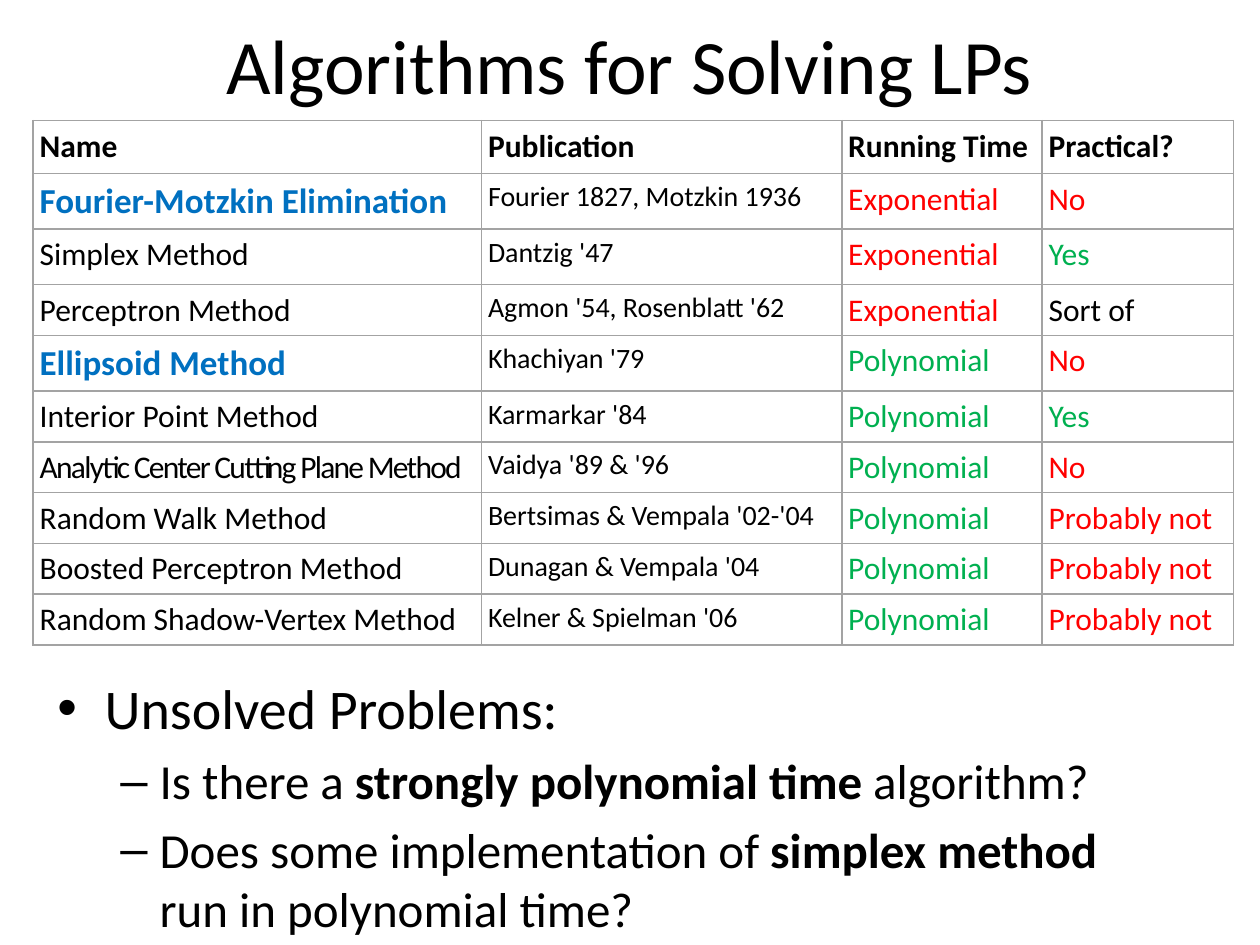
from typing import NamedTuple

from lxml import etree
from pptx import Presentation
from pptx import util as u
from pptx.dml.color import RGBColor
from pptx.enum import text
from pptx.oxml import ns

FONT = "Calibri"
BLACK, BLUE, RED, GREEN, GREY = "000000", "0070C0", "FF0000", "00B050", "A3A3A3"
HEADERS = ("Name", "Publication", "Running Time", "Practical?")
COLUMN_WIDTHS = (9.04, 7.26, 4.04, 3.86)
VERDICT_COLORS = {
    "Exponential": RED,
    "Polynomial": GREEN,
    "Yes": GREEN,
    "No": RED,
    "Probably not": RED,
    "Sort of": BLACK,
}


class Algorithm(NamedTuple):
    name: str
    publication: str
    running_time: str
    practical: str
    height: float = 1.02
    featured: bool = False
    spacing: int = 0


class Bullet(NamedTuple):
    symbol: str
    size: int
    margin: float
    hanging: float
    runs: tuple[tuple[str, bool], ...]


ALGORITHMS = (
    Algorithm("Fourier-Motzkin Elimination", "Fourier 1827, Motzkin 1936",
              "Exponential", "No", 1.12, featured=True),
    Algorithm("Simplex Method", "Dantzig '47", "Exponential", "Yes", 1.12),
    Algorithm("Perceptron Method", "Agmon '54, Rosenblatt '62", "Exponential", "Sort of"),
    Algorithm("Ellipsoid Method", "Khachiyan '79", "Polynomial", "No", 1.12, featured=True),
    Algorithm("Interior Point Method", "Karmarkar '84", "Polynomial", "Yes"),
    Algorithm("Analytic Center Cutting Plane Method", "Vaidya '89 & '96",
              "Polynomial", "No", spacing=-100),
    Algorithm("Random Walk Method", "Bertsimas & Vempala '02-'04", "Polynomial", "Probably not"),
    Algorithm("Boosted Perceptron Method", "Dunagan & Vempala '04", "Polynomial", "Probably not"),
    Algorithm("Random Shadow-Vertex Method", "Kelner & Spielman '06", "Polynomial", "Probably not"),
)

PROBLEMS = (
    Bullet("•", 32, 0.95, 0.95, (("Unsolved Problems:", False),)),
    Bullet("–", 28, 2.06, 0.79, (
        ("Is there a ", False), ("strongly polynomial time", True), (" algorithm?", False))),
    Bullet("–", 28, 2.06, 0.79, (
        ("Does some implementation of ", False), ("simplex method ", True),
        ("run in polynomial time?", False))),
)


def rgb(color: str) -> RGBColor:
    return RGBColor.from_string(color)


def add_run(p, content: str, size: float, color: str = BLACK, bold: bool = False,
            spacing: int = 0) -> None:
    r = p.add_run()
    r.text = content
    r.font.name = FONT
    r.font.size = u.Pt(size)
    r.font.bold = bold
    r.font.color.rgb = rgb(color)
    if spacing:
        r._r.get_or_add_rPr().set("spc", str(spacing))


def add_borders(cell) -> None:
    tc_pr = cell._tc.get_or_add_tcPr()
    for i, side in enumerate(("lnL", "lnR", "lnT", "lnB")):
        line = etree.Element(ns.qn(f"a:{side}"), w=str(u.Pt(1)))
        fill = etree.SubElement(line, ns.qn("a:solidFill"))
        etree.SubElement(fill, ns.qn("a:srgbClr"), val=GREY)
        tc_pr.insert(i, line)


def write_cell(cell, content: str, size: float, color: str = BLACK, bold: bool = False,
               spacing: int = 0) -> None:
    cell.margin_left = cell.margin_right = u.Cm(0.13)
    cell.margin_top = cell.margin_bottom = u.Cm(0.13)
    cell.fill.background()
    add_borders(cell)
    add_run(cell.text_frame.paragraphs[0], content, size, color, bold, spacing)


def write_algorithm(table, row: int, a: Algorithm) -> None:
    table.rows[row].height = u.Cm(a.height)
    name_size, name_color = (20, BLUE) if a.featured else (18, BLACK)
    write_cell(table.cell(row, 0), a.name, name_size, name_color, a.featured, a.spacing)
    write_cell(table.cell(row, 1), a.publication, 16)
    for col, verdict in enumerate((a.running_time, a.practical), 2):
        write_cell(table.cell(row, col), verdict, 18, VERDICT_COLORS[verdict])


def add_algorithm_table(s) -> None:
    frame = s.shapes.add_table(len(ALGORITHMS) + 1, len(HEADERS), u.Cm(0.67), u.Cm(2.43),
                               u.Cm(sum(COLUMN_WIDTHS)), u.Cm(10.62))
    table = frame.table
    table.first_row = table.horz_banding = False
    table.rows[0].height = u.Cm(1.07)
    for col, (header, width) in enumerate(zip(HEADERS, COLUMN_WIDTHS)):
        table.columns[col].width = u.Cm(width)
        write_cell(table.cell(0, col), header, 18, bold=True)
    for row, algorithm in enumerate(ALGORITHMS, 1):
        write_algorithm(table, row, algorithm)


def write_bullet(p, bullet: Bullet) -> None:
    p.space_before = u.Pt(bullet.size * 0.2)
    p_pr = p._p.get_or_add_pPr()
    p_pr.set("marL", str(u.Cm(bullet.margin)))
    p_pr.set("indent", str(-u.Cm(bullet.hanging)))
    etree.SubElement(p_pr, ns.qn("a:buFont"), typeface="Arial")
    etree.SubElement(p_pr, ns.qn("a:buChar"), char=bullet.symbol)
    for content, bold in bullet.runs:
        add_run(p, content, bullet.size, bold=bold)


def add_problems(s) -> None:
    sp = s.shapes.add_textbox(u.Cm(0.91), u.Cm(13.46), u.Cm(22.86), u.Cm(5.23))
    tf = sp.text_frame
    tf.word_wrap = True
    for i, bullet in enumerate(PROBLEMS):
        write_bullet(tf.add_paragraph() if i else tf.paragraphs[0], bullet)


def add_title(s) -> None:
    sp = s.shapes.title
    sp.left, sp.top, sp.width, sp.height = u.Cm(1.27), u.Cm(0), u.Cm(22.86), u.Cm(2.57)
    tf = sp.text_frame
    tf.vertical_anchor = text.MSO_ANCHOR.MIDDLE
    p = tf.paragraphs[0]
    p.alignment = text.PP_ALIGN.CENTER
    add_run(p, "Algorithms for Solving LPs", 44)


def main() -> None:
    prs = Presentation()
    prs.slide_width, prs.slide_height = u.Cm(25.4), u.Cm(19.05)
    s = prs.slides.add_slide(prs.slide_layouts[5])
    add_title(s)
    add_problems(s)
    add_algorithm_table(s)
    prs.save("out.pptx")


if __name__ == "__main__":
    main()
